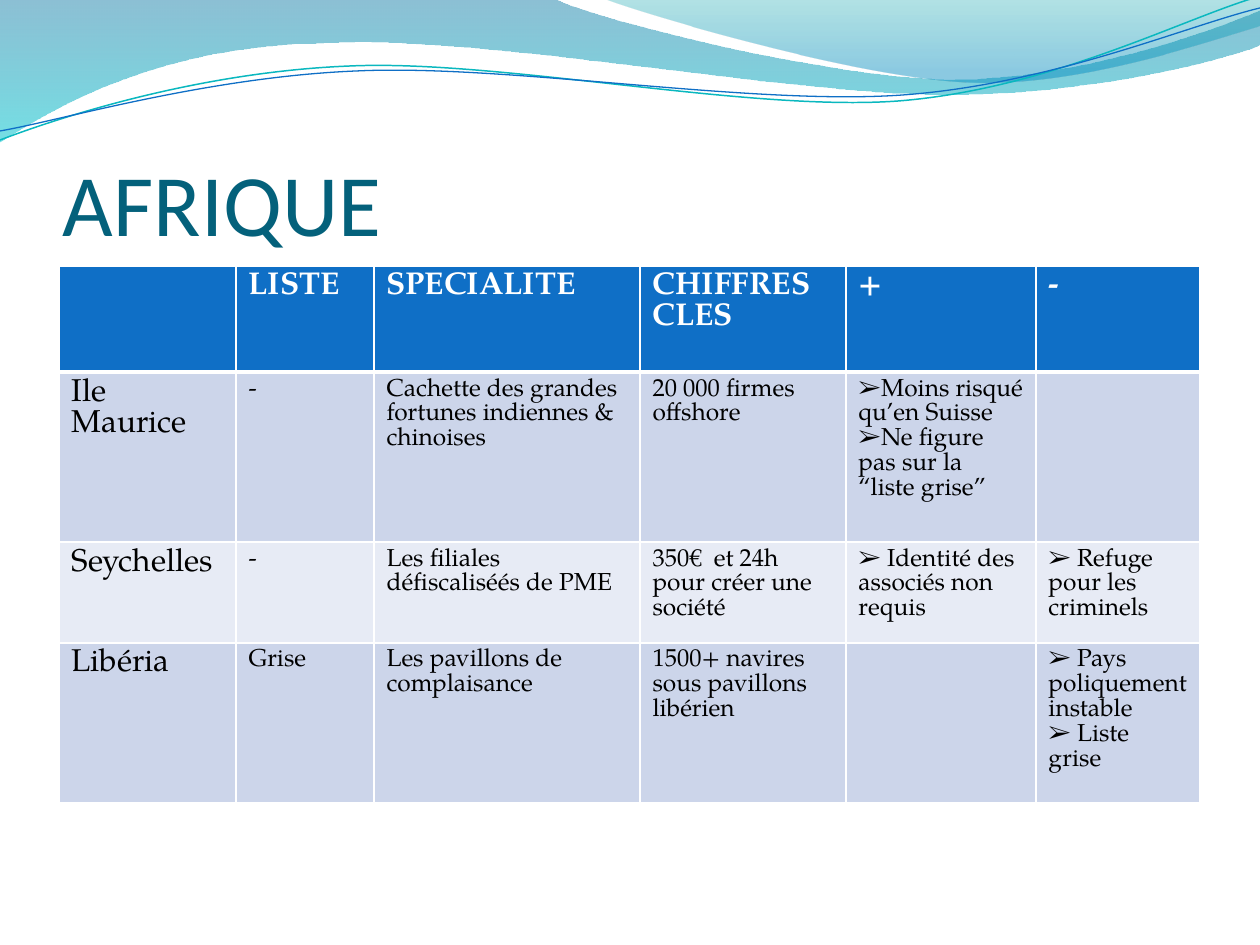
import pptx
import pptx.util
import pptx.dml.color
import pptx.enum.text
import pptx.oxml.ns
from lxml import etree

PX = 914400 / 126
RGBColor = pptx.dml.color.RGBColor
WHITE = RGBColor(0xFF, 0xFF, 0xFF)
BLACK = RGBColor(0, 0, 0)
BLUE = RGBColor(0x0F, 0x6F, 0xC6)
TURQUOISE = RGBColor(0x0A, 0xB8, 0xBF)
TITLE_TEAL = RGBColor(0x04, 0x61, 0x7B)
BAND_DARK = RGBColor(0xCC, 0xD5, 0xEA)
BAND_LIGHT = RGBColor(0xE7, 0xEB, 0xF5)
DEEP_BLUE = RGBColor(0x00, 0x74, 0xA1)
CYAN = RGBColor(0x00, 0xC6, 0xCF)
SEA_GREEN = RGBColor(0x00, 0xA1, 0xA9)
SKY_BLUE = RGBColor(0x00, 0x8B, 0xBF)
BODY_FONT = "TeX Gyre Pagella"
BULLET = "➢"


def px(length):
    return pptx.util.Emu(round(length * PX))


def add_curve(slide, start, segments, closed):
    """Draw lines (2 numbers) and cubic curves (6 numbers), all in px."""
    points = [(px(x), px(y)) for segment in segments
              for x, y in zip(segment[::2], segment[1::2])]
    builder = slide.shapes.build_freeform(px(start[0]), px(start[1]), scale=1.0)
    builder.add_line_segments(points, close=closed)
    shape = builder.convert_to_shape()
    shape.shadow.inherit = False
    # Merge the three lines through each curve's control points into one Bézier
    lines = iter(shape.element.findall(".//" + pptx.oxml.ns.qn("a:lnTo")))
    for segment in segments:
        first = next(lines)
        if len(segment) == 6:
            curve = etree.Element(pptx.oxml.ns.qn("a:cubicBezTo"))
            first.addprevious(curve)
            for line in (first, next(lines), next(lines)):
                curve.append(line[0])
                line.getparent().remove(line)
    return shape


deck = pptx.Presentation()
deck.slide_width, deck.slide_height = px(1260), px(945)
page = deck.slides.add_slide(deck.slide_layouts[6])

# Translucent bands: start, segments, gradient stops (position, colour, opacity %)
bands = [
    ((0, 0),
     [(554, -1), (600, 21, 837, 79, 955, 79), (1075, 79, 1207, 33, 1260, 11),
      (1261, 45), (1239, 55, 1096, 96, 940, 94), (784, 94, 481, 35, 324, 43),
      (163, 45, 58, 105, -1, 142)],
     [(0, DEEP_BLUE, 45), (1, CYAN, 55)]),
    ((604, -1),
     [(641, 14, 859, 78, 969, 82), (1079, 87, 1211, 40, 1260, 26), (1260, 0)],
     [(0, SEA_GREEN, 30), (0.8, SKY_BLUE, 45)]),
]
for start, segments, stops in bands:
    band = add_curve(page, start, segments, True)
    band.line.fill.background()
    band.fill.gradient()
    band.fill.gradient_angle = 270
    for stop, (position, color, opacity) in zip(band.fill.gradient_stops, stops):
        stop.position = position
        stop.color.rgb = color
    colors = band.element.spPr.findall(".//" + pptx.oxml.ns.qn("a:srgbClr"))
    for element, (position, color, opacity) in zip(colors, stops):
        alpha = etree.SubElement(element, pptx.oxml.ns.qn("a:alpha"))
        alpha.set("val", str(opacity * 1000))

waves = [
    ((0, 140), [(60, 117, 199, 72, 349, 66), (498, 59, 747, 112, 898, 101),
                (1050, 89, 1182, 19, 1257, -3)], TURQUOISE, 0.85),
    ((0, 131), [(59, 121, 207, 77, 357, 71), (508, 64, 752, 106, 903, 95),
                (1053, 84, 1186, 26, 1260, 8)], BLUE, 0.75),
]
for start, segments, color, width in waves:
    wave = add_curve(page, start, segments, False)
    wave.fill.background()
    wave.line.color.rgb = color
    wave.line.width = pptx.util.Pt(width)

title = page.shapes.add_textbox(px(63), px(96), px(1134), px(158))
frame = title.text_frame
frame.word_wrap = True
frame.vertical_anchor = pptx.enum.text.MSO_ANCHOR.BOTTOM
frame.margin_left = frame.margin_right = frame.margin_bottom = 0
frame.text = "AFRIQUE"
span = frame.paragraphs[0].runs[0]
span.font.name = "Calibri"
span.font.size = pptx.util.Pt(50)
span.font.color.rgb = TITLE_TEAL

column_widths = [177, 138, 266, 206, 190, 164]
row_heights = [106, 170, 87, 136]
row_fills = [BLUE, BAND_DARK, BAND_LIGHT, BAND_DARK]
rows = [
    ["", "LISTE", "SPECIALITE", "CHIFFRES CLES", "+", "-"],
    ["Ile Maurice", "-", "Cachette des grandes fortunes indiennes & chinoises",
     "20 000 firmes offshore",
     "➢Moins risqué qu’en Suisse\n➢Ne figure pas sur la “liste grise”", ""],
    ["Seychelles", "-", "Les filiales défiscaliséés de PME",
     "350€  et 24h pour créer une société",
     "➢ Identité des associés non requis", "➢ Refuge pour les criminels"],
    ["Libéria", "Grise", "Les pavillons de complaisance",
     "1500+ navires sous pavillons libérien", "",
     "➢ Pays poliquement instable\n➢ Liste grise"],
]
table = page.shapes.add_table(len(rows), len(column_widths), px(59), px(266),
                              px(sum(column_widths)), px(sum(row_heights))).table
table.first_row = table.horz_banding = False
for column, width in zip(table.columns, column_widths):
    column.width = px(width)

for r, texts in enumerate(rows):
    table.rows[r].height = px(row_heights[r])
    for c, text in enumerate(texts):
        cell = table.cell(r, c)
        cell.fill.solid()
        cell.fill.fore_color.rgb = row_fills[r]
        properties = cell._tc.get_or_add_tcPr()
        for index, side in enumerate("LRTB"):
            under_header = (r, side) in ((0, "B"), (1, "T"))
            border = etree.Element(pptx.oxml.ns.qn("a:ln" + side))
            border.set("w", str(pptx.util.Pt(3 if under_header else 1)))
            fill = etree.SubElement(border, pptx.oxml.ns.qn("a:solidFill"))
            etree.SubElement(fill, pptx.oxml.ns.qn("a:srgbClr")).set("val", str(WHITE))
            properties.insert(index, border)

        cell.text_frame.text = text.replace(BULLET, "")
        for para, line in zip(cell.text_frame.paragraphs, text.split("\n")):
            if line.startswith(BULLET):
                para_properties = para._p.get_or_add_pPr()
                para_properties.set("marL", "0")
                para_properties.set("indent", "0")
                for tag, key, value in (("a:buFont", "typeface", BODY_FONT),
                                        ("a:buChar", "char", BULLET)):
                    etree.SubElement(para_properties, pptx.oxml.ns.qn(tag)).set(key, value)
            for span in para.runs:
                span.font.name = BODY_FONT
                span.font.size = pptx.util.Pt(18 if r == 0 or c == 0 else 14)
                span.font.bold = r == 0
                span.font.color.rgb = WHITE if r == 0 else BLACK

deck.save("out.pptx")
